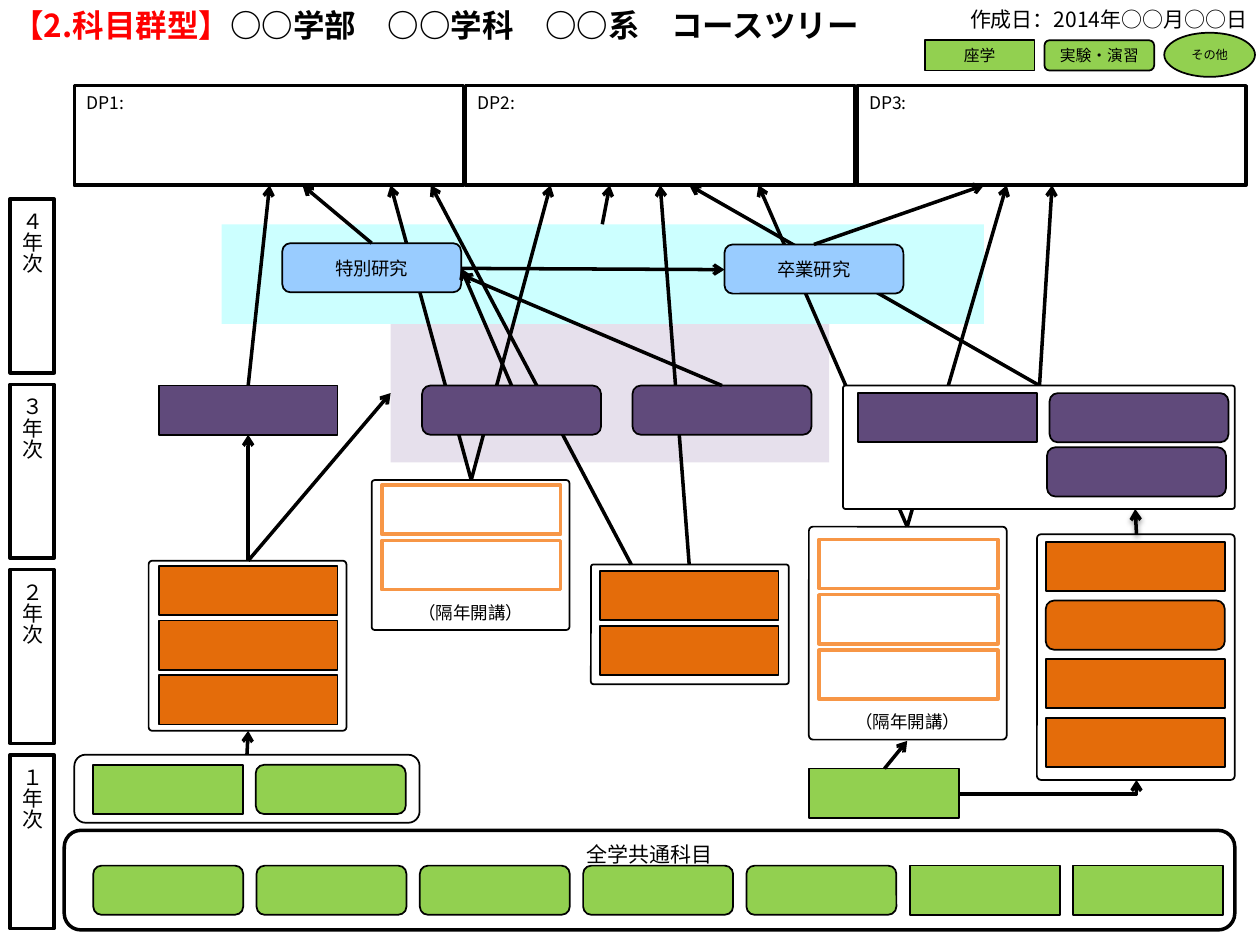
"""Build a course tree slide that links subject groups to diploma goals."""
from lxml.etree import SubElement as Sub
from pptx import Presentation
from pptx.dml.color import RGBColor as RGB
from pptx.enum.shapes import MSO_CONNECTOR as LINK, MSO_SHAPE as KIND
from pptx.enum.text import MSO_ANCHOR as ANCHOR, PP_ALIGN as ALIGN
from pptx.oxml.ns import qn
from pptx.util import Inches, Pt

HUES = {"black": "000000", "white": "FFFFFF", "red": "FF0000", "green": "92D050",
        "orange": "E46C0A", "amber": "F79646", "purple": "604A7B", "blue": "99CCFF",
        "cyan": "CCFFFF", "lilac": "E6E0EC"}
FONT = "Noto Sans CJK JP"
RECT, ROUND, OVAL = KIND.RECTANGLE, KIND.ROUNDED_RECTANGLE, KIND.OVAL
THICK, THIN = 2, 1


def hue(name):
    """Give the colour of a name."""
    return RGB.from_string(HUES[name])


def write(frame, text, size=12, color="black", bold=False, align=ALIGN.CENTER,
          anchor=ANCHOR.MIDDLE):
    """Add a run to the first paragraph of a text frame."""
    frame.word_wrap = True
    frame.vertical_anchor = anchor
    para = frame.paragraphs[0]
    para.alignment = align
    run = para.add_run()
    run.text = text
    font = run.font
    font.size, font.bold, font.name = Pt(size), bold, FONT
    font.color.rgb = hue(color)
    Sub(font._element, qn("a:ea"), typeface=FONT)


class Tree:
    """Hold the slide and draw each kind of element on it."""

    wide, high = 1.42, 0.39

    def __init__(self, slide):
        """Keep the slide."""
        self.slide = slide

    def box(self, x, y, w, h, kind=RECT, fill=None, line="black", width=THIN,
            bend=None, text="", **style):
        """Draw a preset shape with text if given."""
        shape = self.slide.shapes.add_shape(kind, *map(Inches, (x, y, w, h)))
        shape.shadow.inherit = False
        if bend is not None:
            shape.adjustments[0] = bend
        if fill:
            shape.fill.solid()
            shape.fill.fore_color.rgb = hue(fill)
        else:
            shape.fill.background()
        if line:
            shape.line.color.rgb = hue(line)
            shape.line.width = Pt(width)
        else:
            shape.line.fill.background()
        if text:
            write(shape.text_frame, text, **style)
        return shape

    def group(self, x, y, w, h, **style):
        """Draw a frame round a group of subjects."""
        return self.box(x, y, w, h, ROUND, bend=0.021, **style)

    def course(self, x, y, fill, kind=RECT, w=wide, **style):
        """Draw one subject."""
        return self.box(x, y, w, self.high, kind, fill, **style)

    def label(self, x, y, w, h, runs, **style):
        """Draw a text box from runs of text and colour."""
        frame = self.slide.shapes.add_textbox(*map(Inches, (x, y, w, h))).text_frame
        for text, color in runs:
            write(frame, text, color=color, **style)

    def arrow(self, x, y, to_x, to_y, bent=False, shade=False):
        """Draw a connector with an open arrowhead at its end."""
        kind = LINK.ELBOW if bent else LINK.STRAIGHT
        link = self.slide.shapes.add_connector(kind, *map(Inches, (x, y, to_x, to_y)))
        link.line.color.rgb = hue("black")
        link.line.width = Pt(THICK)
        props = link._element.spPr
        if bent:
            props.find(qn("a:prstGeom")).set("prst", "bentConnector2")
        Sub(link.line._get_or_add_ln(), qn("a:tailEnd"), type="arrow")
        effect = Sub(props, qn("a:effectLst"))
        if shade:
            cast = Sub(effect, qn("a:outerShdw"), blurRad=str(Pt(3.1)),
                       dist=str(Pt(1.6)), dir="5400000", rotWithShape="0")
            tone = Sub(cast, qn("a:srgbClr"), val=HUES["black"])
            Sub(tone, qn("a:alpha"), val="38000")


def draw_goals(tree):
    """Draw the bands, the links behind the boxes, the years and the goals."""
    tree.box(3.1, 2.57, 3.48, 1.1, fill="lilac", line=None)
    tree.box(1.76, 1.78, 6.05, 0.79, fill="cyan", line=None)
    for x, y, goal in [(5.47, 4.48, 5.24), (5.01, 4.48, 3.42), (3.74, 3.81, 3.1),
                       (3.74, 3.81, 4.37), (7.2, 4.18, 6.02), (7.2, 4.18, 7.99),
                       (8.25, 3.06, 5.47), (1.97, 3.06, 2.14)]:
        tree.arrow(x, y, goal, 1.47)
    tree.label(7.53, 0, 2.47, 0.3, [("作成日：2014年○○月○○日", "black")],
               align=ALIGN.RIGHT, anchor=ANCHOR.TOP)
    tree.box(0.51, 6.59, 9.29, 0.79, ROUND, "white", width=THICK,
             text="全学共通科目", anchor=ANCHOR.TOP)
    for i, year in enumerate("４３２１"):
        cell = tree.box(0.08, 1.58 + 1.47 * i, 0.35, 1.38, fill="white",
                        width=THICK, text=year + "年次")
        cell.text_frame._txBody.bodyPr.set("vert", "eaVert")
    for i in range(3):
        tree.box(0.59 + 3.105 * i, 0.68, 3.09, 0.79, fill="white", width=THICK,
                 text=f"DP{i + 1}:", size=10, align=ALIGN.LEFT, anchor=ANCHOR.TOP)


def draw_courses(tree):
    """Draw the subjects of each year in their groups."""
    tree.box(0.59, 5.99, 2.74, 0.54, ROUND)
    first = [(0.74, 6.07, RECT), (2.03, 6.07, ROUND), (6.42, 6.1, RECT)]
    first += [(0.74 + 1.296 * i, 6.87, ROUND if i < 5 else RECT) for i in range(7)]
    for x, y, kind in first:
        tree.course(x, y, "green", kind, w=1.19)

    tree.group(1.18, 4.45, 1.57, 1.35)
    tree.group(4.69, 4.48, 1.57, 0.95)
    tree.group(8.23, 4.24, 1.57, 1.95)
    for x, top, step, count in [(1.26, 4.49, 0.435, 3), (4.76, 4.53, 0.44, 2),
                                (8.3, 4.3, 0.466, 4)]:
        for i in range(count):
            kind = ROUND if count == 4 and i == 1 else RECT
            tree.course(x, top + step * i, "orange", kind)

    for x, y, h, top, count in [(2.95, 3.81, 1.19, 3.85, 2),
                                (6.42, 4.18, 1.69, 4.28, 3)]:
        tree.group(x, y, 1.57, h, text="（隔年開講）", size=10, anchor=ANCHOR.BOTTOM)
        for i in range(count):
            tree.course(x + 0.08, top + 0.44 * i, "white", line="amber", width=THICK)

    tree.group(6.69, 3.06, 3.11, 0.98, fill="white")
    for x, y, kind in [(1.26, 3.06, RECT), (3.35, 3.06, ROUND), (5.02, 3.06, ROUND),
                       (6.81, 3.12, RECT), (8.33, 3.12, ROUND), (8.31, 3.55, ROUND)]:
        tree.course(x, y, "purple", kind)
    for x, y, name in [(2.24, 1.93, "特別研究"), (5.75, 1.94, "卒業研究")]:
        tree.course(x, y, "blue", ROUND, text=name, size=10.5)


def draw_links(tree):
    """Draw the links that lie over the boxes."""
    for ends in [(1.96, 5.99, 1.97, 5.8), (1.97, 4.45, 1.97, 3.45),
                 (2.95, 1.93, 2.4, 1.47), (4.78, 1.78, 4.84, 1.47),
                 (6.46, 1.94, 7.81, 1.47), (7.02, 6.1, 7.2, 5.88),
                 (8.25, 3.06, 8.35, 1.47), (1.97, 4.45, 3.1, 3.12),
                 (4.06, 3.06, 3.66, 2.13), (5.73, 3.06, 3.66, 2.18),
                 (3.66, 2.13, 5.75, 2.14)]:
        tree.arrow(*ends)
    tree.arrow(7.61, 6.3, 9.02, 6.19, bent=True)
    tree.arrow(9.02, 4.24, 9.01, 4.04, shade=True)


def draw_head(tree):
    """Draw the legend and the title."""
    for x, kind, name in [(7.34, RECT, "座学"), (8.29, ROUND, "実験・演習")]:
        tree.box(x, 0.32, 0.87, 0.24, kind, "green", text=name, size=9)
    tree.box(9.24, 0.26, 0.72, 0.35, OVAL, "green", text="その他", size=7)
    tree.label(0, 0, 8.39, 0.4, [("【2.科目群型】", "red"),
                                 ("○○学部　○○学科　○○系　コースツリー", "black")],
               size=18, bold=True, align=ALIGN.LEFT)


def main():
    """Build and save the slide."""
    deck = Presentation()
    deck.slide_width, deck.slide_height = Inches(10), Inches(7.5)
    tree = Tree(deck.slides.add_slide(deck.slide_layouts[6]))
    for draw in (draw_goals, draw_courses, draw_links, draw_head):
        draw(tree)
    deck.save("out.pptx")


if __name__ == "__main__":
    main()
